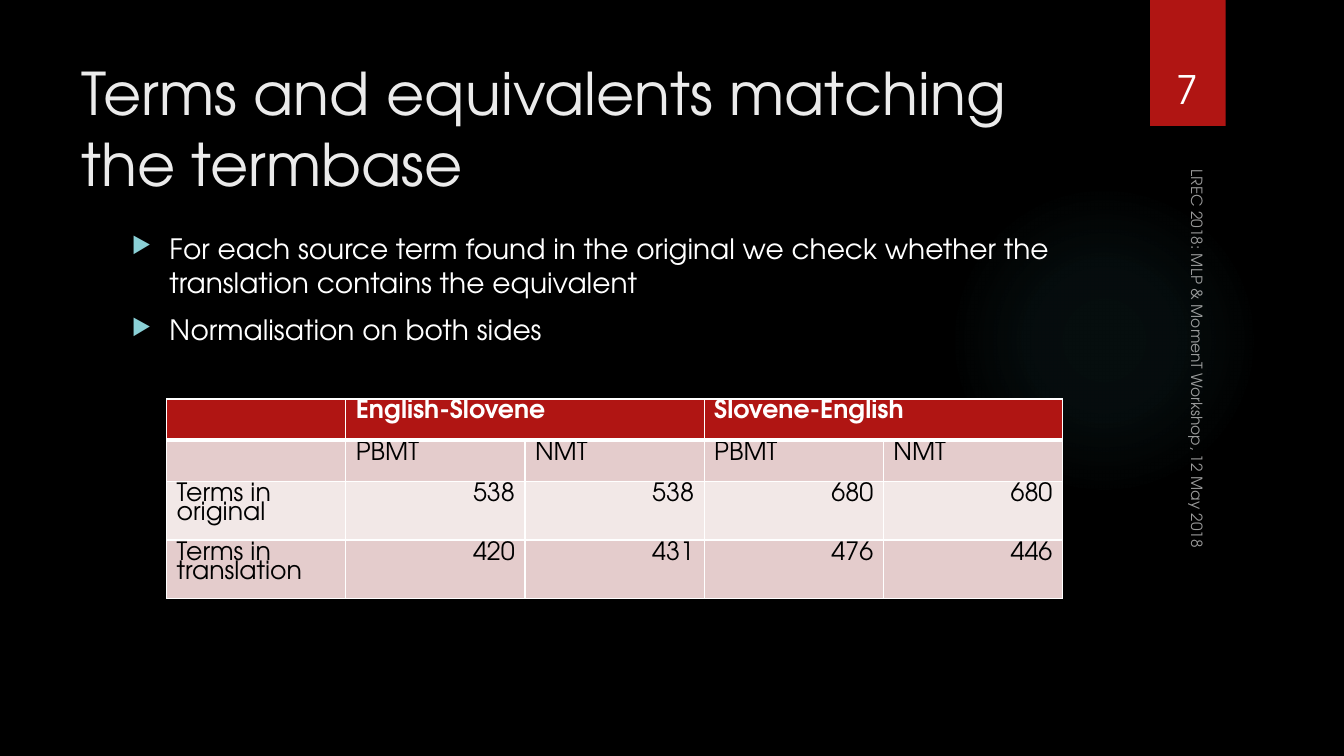
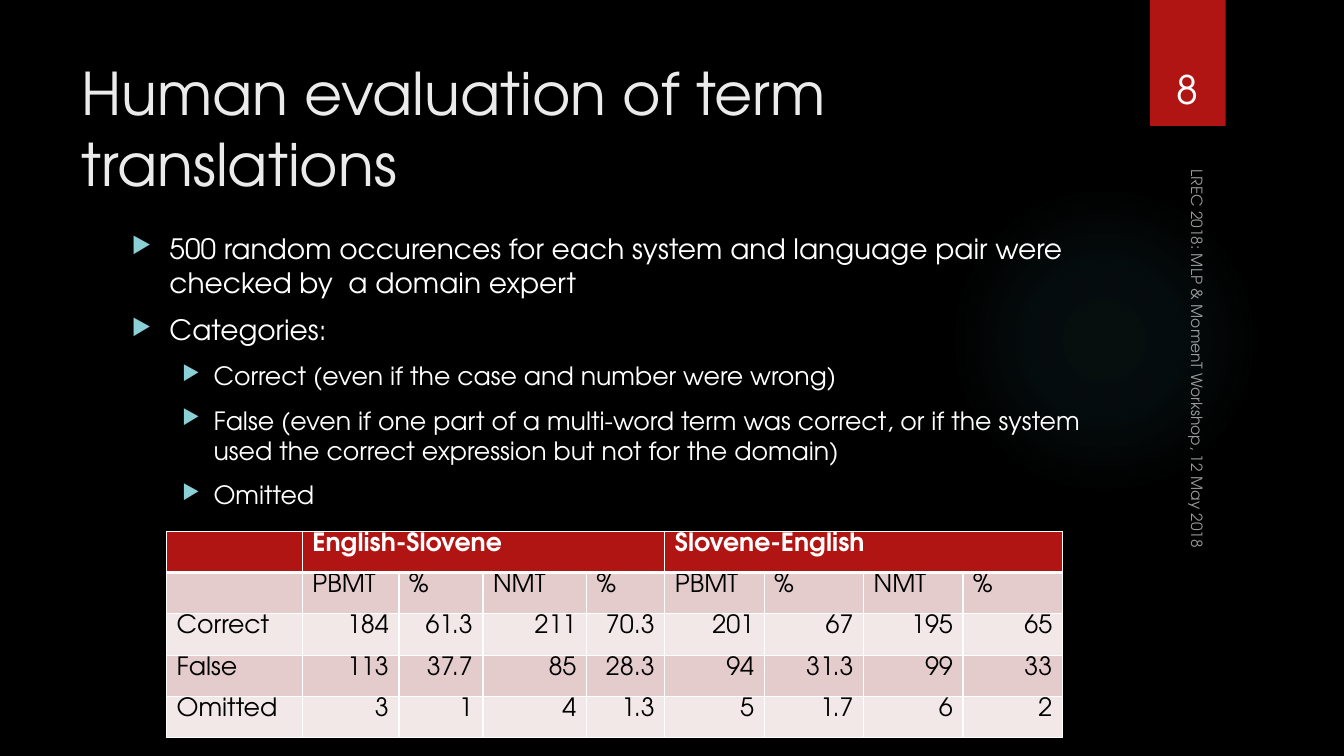
from dataclasses import dataclass

from lxml import etree
from pptx import Presentation
from pptx.dml.color import RGBColor
from pptx.enum import shapes, text
from pptx.oxml import ns
from pptx.util import Pt


@dataclass(frozen=True)
class Theme:
    font: str = "TeX Gyre Adventor"
    background: str = "000000"
    title: str = "EBEBEB"
    light: str = "FFFFFF"
    dark: str = "000000"
    accent: str = "B01513"
    bands: tuple = ("E4CCCC", "F2E8E7")
    bullet: str = "8AD0D6"
    glow: str = "50B9C1"
    title_size: int = 42
    number_size: int = 28
    body_sizes: tuple = (20, 18)
    table_size: int = 18
    footer_size: int = 11


T = Theme()
FOOTER = "LREC 2018: MLP & MomenT Workshop, 12 May 2018"
INDENTS = ((27, -27), (58.5, -22.5))  # left margin and first line, by level
LANGUAGES = ("English-Slovene", "Slovene-English")

SLIDES = [
    dict(
        number=7,
        title="Terms and equivalents matching the termbase",
        bullets=[
            (0, "For each source term found in the original we check whether "
                "the translation contains the equivalent"),
            (0, "Normalisation on both sides"),
        ],
        top=285,
        widths=[128] * 5,
        rows=[
            ["", "PBMT", "NMT", "PBMT", "NMT"],
            ["Terms in original", "538", "538", "680", "680"],
            ["Terms in translation", "420", "431", "476", "446"],
        ],
    ),
    dict(
        number=8,
        title="Human evaluation of term translations",
        bullets=[
            (0, "500 random occurences for each system and language pair were "
                "checked by  a domain expert"),
            (0, "Categories:"),
            (1, "Correct (even if the case and number were wrong)"),
            (1, "False (even if one part of a multi-word term was correct, or if "
                "the system used the correct expression but not for the domain)"),
            (1, "Omitted"),
        ],
        top=379.5,
        widths=[97, 69, 60, 74, 56] + [71] * 4,
        rows=[
            ["", "PBMT", "%", "NMT", "%", "PBMT", "%", "NMT", "%"],
            ["Correct", "184", "61.3", "211", "70.3", "201", "67", "195", "65"],
            ["False", "113", "37.7", "85", "28.3", "94", "31.3", "99", "33"],
            ["Omitted", "3", "1", "4", "1.3", "5", "1.7", "6", "2"],
        ],
    ),
]


def sub(parent, tag, **attrs):
    """Append a DrawingML element and return it."""
    return etree.SubElement(parent, ns.qn("a:" + tag),
                            {k: str(v) for k, v in attrs.items()})


def add_run(p, content, size, color, bold=False):
    r = p.add_run()
    r.text = content
    r.font.name, r.font.size, r.font.bold = T.font, Pt(size), bold
    r.font.color.rgb = RGBColor.from_string(color)
    return r


prs = Presentation()
prs.slide_width, prs.slide_height = Pt(960), Pt(540)
fill = prs.slide_master.background.fill
fill.solid()
fill.fore_color.rgb = RGBColor.from_string(T.background)

for data in SLIDES:
    s = prs.slides.add_slide(prs.slide_layouts[5])

    # Glow and ribbon behind the text
    glow = s.shapes.add_shape(shapes.MSO_SHAPE.OVAL, Pt(677.5), Pt(132), Pt(222), Pt(222))
    ribbon = s.shapes.add_shape(shapes.MSO_SHAPE.RECTANGLE, Pt(821.5), 0, Pt(54), Pt(90))
    for sp in (glow, ribbon):
        sp.shadow.inherit = False
        sp.line.fill.background()
    ribbon.fill.solid()
    ribbon.fill.fore_color.rgb = RGBColor.from_string(T.accent)
    grad = etree.Element(ns.qn("a:gradFill"), rotWithShape="1")
    stops = sub(grad, "gsLst")
    for position, opacity in ((0, 7), (36, 6), (69, 0)):
        stop = sub(stops, "gs", pos=position * 1000)
        sub(sub(stop, "srgbClr", val=T.glow), "alpha", val=opacity * 1000)
    sub(sub(grad, "path", path="circle"), "fillToRect", l=50000, t=50000, r=50000, b=50000)
    glow.element.spPr.find(ns.qn("a:prstGeom")).addnext(grad)

    # Title
    title = s.shapes.title
    ribbon.element.addnext(title.element)
    title.left, title.top, title.width, title.height = Pt(51), Pt(36), Pt(741), Pt(110)
    tf = title.text_frame
    tf.auto_size = text.MSO_AUTO_SIZE.NONE
    tf.vertical_anchor = text.MSO_ANCHOR.MIDDLE
    p = tf.paragraphs[0]
    p.alignment = text.PP_ALIGN.LEFT
    add_run(p, data["title"], T.title_size, T.title)

    # Bullets
    tf = s.shapes.add_textbox(Pt(87), Pt(162), Pt(704), Pt(330)).text_frame
    tf.word_wrap = True
    for i, (level, content) in enumerate(data["bullets"]):
        p = tf.add_paragraph() if i else tf.paragraphs[0]
        p.level = level
        pPr = p._p.get_or_add_pPr()
        margin, indent = INDENTS[level]
        pPr.set("marL", str(Pt(margin)))
        pPr.set("indent", str(Pt(indent)))
        sub(sub(pPr, "buClr"), "srgbClr", val=T.bullet)
        sub(pPr, "buSzPct", val=80000)
        sub(pPr, "buChar", char="▶")
        if i:
            p.space_before = Pt(10)
        add_run(p, content, T.body_sizes[level], T.light)

    # Table: each language heads half of the value columns
    span = (len(data["widths"]) - 1) // 2
    header = [""]
    for language in LANGUAGES:
        header += [language] + [""] * (span - 1)
    rows = [header] + data["rows"]
    table = s.shapes.add_table(len(rows), len(header), Pt(119), Pt(data["top"]),
                               Pt(sum(data["widths"])), Pt(29.5 * len(rows))).table
    for column, width in zip(table.columns, data["widths"]):
        column.width = Pt(width)
    for i, row in enumerate(rows):
        table.rows[i].height = Pt(29.5)
        for j, content in enumerate(row):
            cell = table.cell(i, j)
            tcPr = cell._tc.get_or_add_tcPr()
            for side in ("lnL", "lnR", "lnT", "lnB"):
                thick = (i, side) in ((0, "lnB"), (1, "lnT"))
                ln = sub(tcPr, side, w=Pt(3 if thick else 1))
                sub(sub(ln, "solidFill"), "srgbClr", val=T.light)
            cell.fill.solid()
            cell.fill.fore_color.rgb = RGBColor.from_string(
                T.bands[(i - 1) % 2] if i else T.accent)
            p = cell.text_frame.paragraphs[0]
            p.line_spacing = 0.8
            if i > 1 and j:
                p.alignment = text.PP_ALIGN.RIGHT
            if content:
                add_run(p, content, T.table_size, T.dark if i else T.light, bold=i == 0)
    for j in (1, 1 + span):
        table.cell(0, j).merge(table.cell(0, j + span - 1))

    # Footer and slide number
    footer = s.shapes.add_textbox(Pt(705), Pt(254), Pt(304), Pt(24))
    footer.rotation = 90
    number = s.shapes.add_textbox(Pt(815), Pt(23), Pt(66), Pt(60.5))
    for sp in (footer, number):
        sp.text_frame.word_wrap = True
        sp.text_frame.vertical_anchor = text.MSO_ANCHOR.BOTTOM
    r = add_run(footer.text_frame.paragraphs[0], FOOTER, T.footer_size, T.light)
    sub(r._r.find(".//" + ns.qn("a:srgbClr")), "alpha", val=60000)
    p = number.text_frame.paragraphs[0]
    p.alignment = text.PP_ALIGN.CENTER
    add_run(p, str(data["number"]), T.number_size, T.light)

prs.save("out.pptx")
